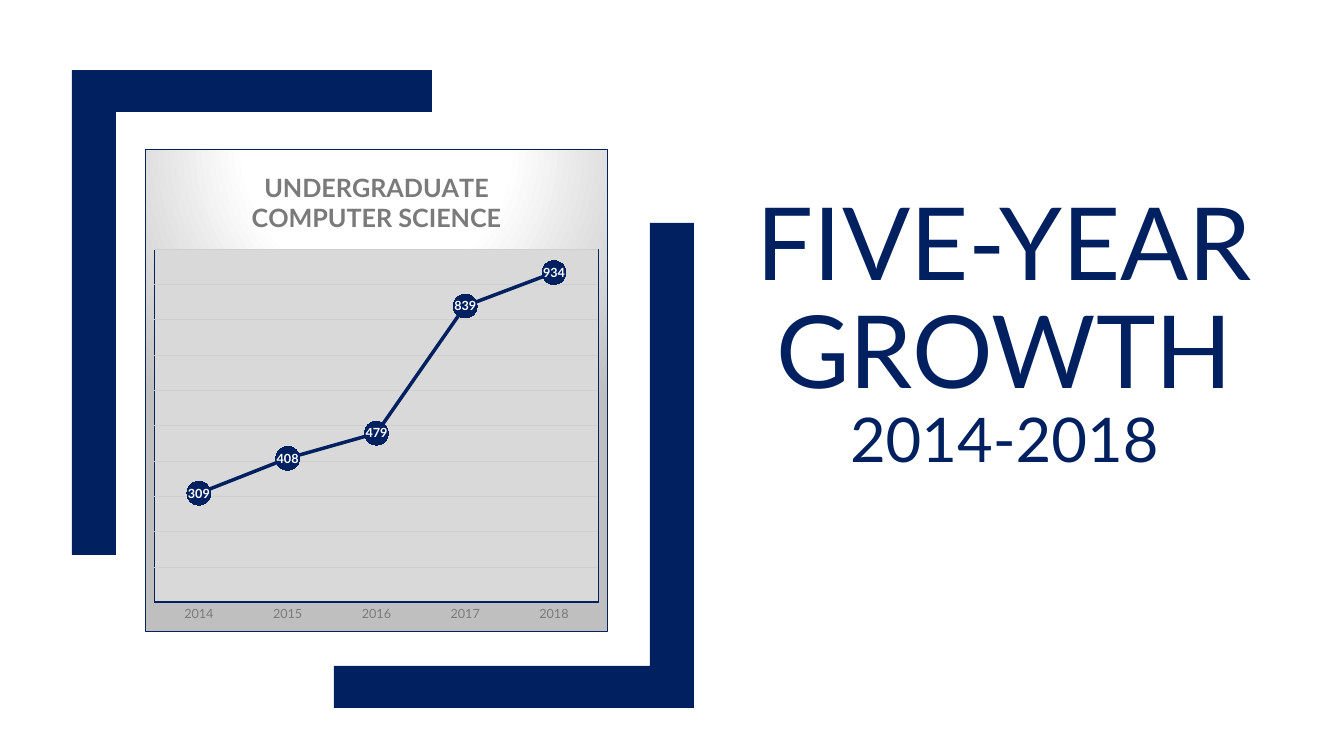
from lxml import etree
from pptx import Presentation
from pptx.chart.data import CategoryChartData
from pptx.dml.color import RGBColor
from pptx.enum.chart import XL_CHART_TYPE, XL_LABEL_POSITION, XL_MARKER_STYLE, XL_TICK_LABEL_POSITION, XL_TICK_MARK
from pptx.enum.text import MSO_ANCHOR, MSO_AUTO_SIZE, PP_ALIGN
from pptx.oxml import parse_xml
from pptx.oxml.ns import nsdecls, qn
from pptx.util import Emu, Pt

NAVY = RGBColor(0x00, 0x20, 0x60)
WHITE = RGBColor(0xFF, 0xFF, 0xFF)
SILVER = RGBColor(0xBF, 0xBF, 0xBF)
PLOT_GRAY = RGBColor(0xD9, 0xD9, 0xD9)
GRID_GRAY = RGBColor(0xCF, 0xCF, 0xCF)
TEXT_GRAY = RGBColor(0x7A, 0x7A, 0x7A)
FONT = "Lato"
EMU_PER_PX = 914400 / 100.8

SLIDE_SIZE = (1344, 756)
HEADLINE = [("FIVE-YEAR GROWTH", 72), ("2014-2018", 44)]
HEADLINE_BOX = (740, 70, 529, 411)
CHART_TITLE = "UNDERGRADUATE COMPUTER SCIENCE"
ENROLLMENT = {"2014": 309, "2015": 408, "2016": 479, "2017": 839, "2018": 934}
CHART_BOX = (145, 149, 463, 483)
PLOT_BOX = (154, 249, 445, 354)
TOP_BRACKET = [(116, 555), (72, 555), (72, 70), (432, 70), (432, 112), (116, 112)]
BRACKET_SUM = (766, 778)  # the lower bracket is the upper one turned by 180 degrees
GRADIENT_STOPS = [(0, WHITE), (39, WHITE), (100, SILVER)]


def px(length):
    return Emu(round(length * EMU_PER_PX))


def style_font(font, size, color, bold=False):
    font.name, font.size, font.bold = FONT, Pt(size), bold
    font.color.rgb = color


def add_bracket(slide, corners):
    builder = slide.shapes.build_freeform(*corners[0], scale=EMU_PER_PX)
    builder.add_line_segments(corners[1:], close=True)
    bracket = builder.convert_to_shape()
    bracket.shadow.inherit = False
    bracket.fill.solid()
    bracket.fill.fore_color.rgb = NAVY
    bracket.line.fill.background()


def write_headline(title):
    title.left, title.top, title.width, title.height = map(px, HEADLINE_BOX)
    frame = title.text_frame
    frame.word_wrap = True
    frame.auto_size = MSO_AUTO_SIZE.NONE
    frame.vertical_anchor = MSO_ANCHOR.BOTTOM
    paragraph = frame.paragraphs[0]
    paragraph.alignment = PP_ALIGN.CENTER
    paragraph.line_spacing = 0.89
    for index, (words, size) in enumerate(HEADLINE):
        if index:
            paragraph.add_line_break()
        run = paragraph.add_run()
        run.text = words
        style_font(run.font, size, NAVY)


def frame_xml(fill, line_width):
    return parse_xml(
        f'<c:spPr {nsdecls("c", "a")}>{fill}<a:ln w="{Pt(line_width)}">'
        f'<a:solidFill><a:srgbClr val="{NAVY}"/></a:solidFill></a:ln></c:spPr>')


def paint_chart(chart):
    """Give the chart area its radial gradient and the plot area its fill and place."""
    stops = "".join(f'<a:gs pos="{pos * 1000}"><a:srgbClr val="{color}"/></a:gs>'
                    for pos, color in GRADIENT_STOPS)
    gradient = (f'<a:gradFill><a:gsLst>{stops}</a:gsLst><a:path path="circle">'
                '<a:fillToRect l="50000" t="-80000" r="50000" b="180000"/></a:path></a:gradFill>')
    chart_xml = chart._chartSpace.chart
    chart_xml.addnext(frame_xml(gradient, 0.75))

    plot_area = chart_xml.plotArea
    solid = f'<a:solidFill><a:srgbClr val="{PLOT_GRAY}"/></a:solidFill>'
    plot_area.append(frame_xml(solid, 0.75))
    for old_layout in plot_area.findall(qn("c:layout")):
        plot_area.remove(old_layout)
    left, top, width, height = CHART_BOX
    plot_left, plot_top, plot_width, plot_height = PLOT_BOX
    settings = {
        "layoutTarget": "inner", "xMode": "edge", "yMode": "edge",
        "x": round((plot_left - left) / width, 4), "y": round((plot_top - top) / height, 4),
        "w": round(plot_width / width, 4), "h": round(plot_height / height, 4),
    }
    layout = parse_xml(f'<c:layout {nsdecls("c")}><c:manualLayout/></c:layout>')
    for tag, value in settings.items():
        etree.SubElement(layout[0], qn(f"c:{tag}")).set("val", str(value))
    plot_area.insert(0, layout)


def add_enrollment_chart(slide):
    data = CategoryChartData()
    data.categories = list(ENROLLMENT)
    data.add_series("Series 1", list(ENROLLMENT.values()))
    chart = slide.shapes.add_chart(
        XL_CHART_TYPE.LINE_MARKERS, *map(px, CHART_BOX), data).chart
    style_font(chart.font, 10, TEXT_GRAY)
    chart.has_legend = False
    heading = chart.chart_title.text_frame.paragraphs[0].add_run()
    heading.text = CHART_TITLE
    style_font(heading.font, 18, TEXT_GRAY, bold=True)
    chart.chart_title.include_in_layout = False

    years = chart.category_axis
    years.major_tick_mark = XL_TICK_MARK.NONE
    years.format.line.color.rgb = NAVY
    years.format.line.width = Pt(1.5)
    style_font(years.tick_labels.font, 9, TEXT_GRAY)

    students = chart.value_axis
    students.minimum_scale, students.maximum_scale, students.major_unit = 0, 1000, 100
    students.major_tick_mark = XL_TICK_MARK.NONE
    students.tick_label_position = XL_TICK_LABEL_POSITION.NONE
    students.visible = False
    students.major_gridlines.format.line.color.rgb = GRID_GRAY
    students.major_gridlines.format.line.width = Pt(0.75)

    chart.plots[0].vary_by_categories = False
    growth = chart.plots[0].series[0]
    growth.smooth = False
    growth.format.line.color.rgb = NAVY
    growth.format.line.width = Pt(2.5)
    growth.marker.style = XL_MARKER_STYLE.CIRCLE
    growth.marker.size = 17
    growth.marker.format.fill.solid()
    growth.marker.format.fill.fore_color.rgb = NAVY
    growth.marker.format.line.fill.background()
    labels = growth.data_labels
    labels.show_value = True
    labels.position = XL_LABEL_POSITION.CENTER
    style_font(labels.font, 9, WHITE, bold=True)
    paint_chart(chart)


def main():
    deck = Presentation()
    deck.slide_width, deck.slide_height = map(px, SLIDE_SIZE)
    slide = deck.slides.add_slide(deck.slide_layouts[5])
    write_headline(slide.shapes.title)
    sum_x, sum_y = BRACKET_SUM
    add_bracket(slide, [(sum_x - x, sum_y - y) for x, y in TOP_BRACKET])
    add_bracket(slide, TOP_BRACKET)
    add_enrollment_chart(slide)
    deck.save("out.pptx")


if __name__ == "__main__":
    main()
